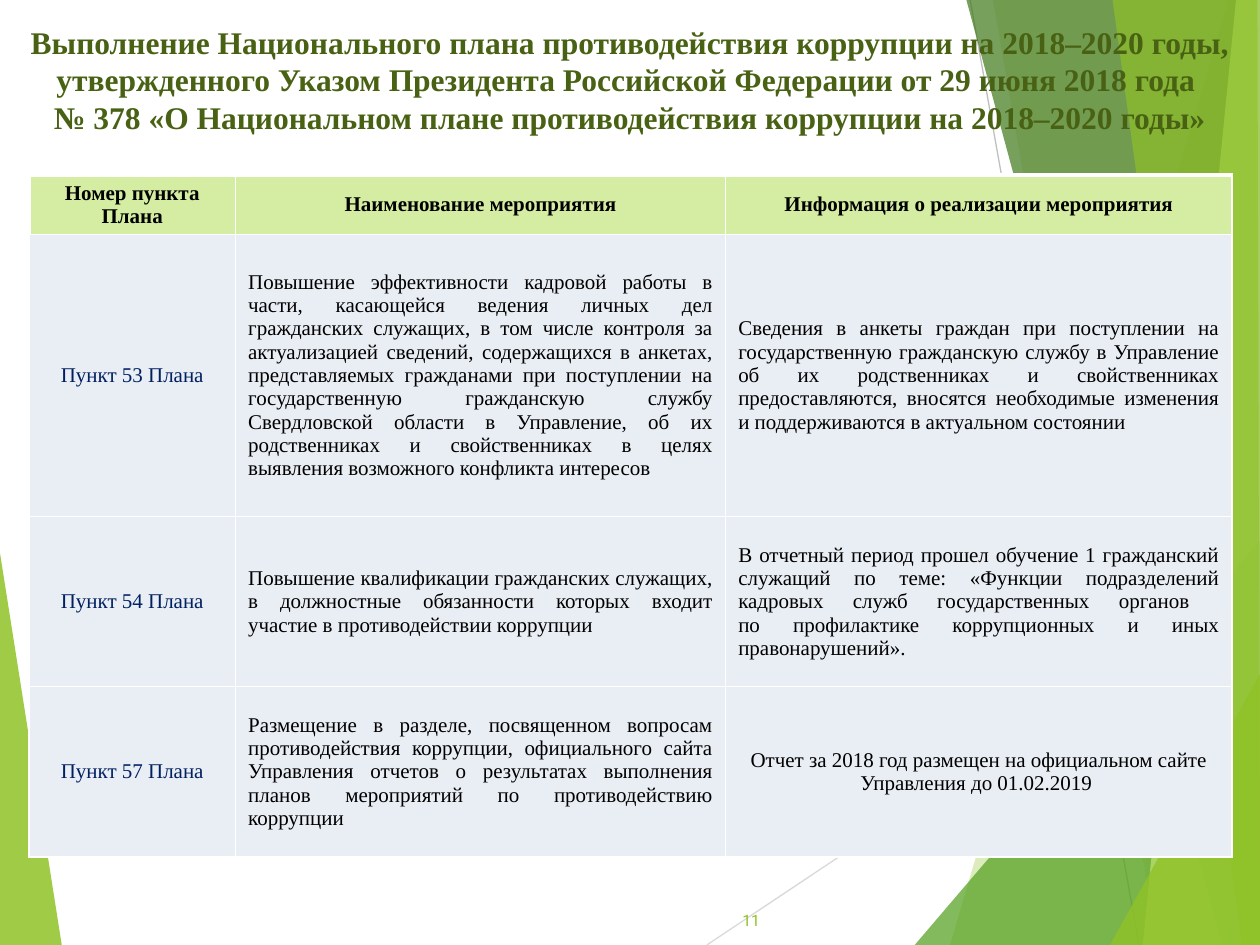
from copy import deepcopy

from lxml import etree
from pptx import Presentation
from pptx.dml.color import RGBColor
from pptx.enum.shapes import MSO_CONNECTOR
from pptx.enum.text import MSO_ANCHOR, MSO_AUTO_SIZE, PP_ALIGN
from pptx.oxml.ns import qn
from pptx.util import Inches, Pt

CENTER, JUSTIFY, RIGHT = PP_ALIGN.CENTER, PP_ALIGN.JUSTIFY, PP_ALIGN.RIGHT
TOP, MIDDLE = MSO_ANCHOR.TOP, MSO_ANCHOR.MIDDLE
STRAIGHT = MSO_CONNECTOR.STRAIGHT
NO_AUTOFIT = MSO_AUTO_SIZE.NONE

WIDTH, HEIGHT = 10, 7.5
COLORS = {
    "title": "486113", "text": "000000", "item": "002060", "border": "FFFFFF",
    "header": "D5EDA2", "body": "E9EDF4", "lime": "90C226", "green": "54A021",
    "forest": "3F7819", "pale": "C0E474", "light gray": "D9D9D9", "gray": "BFBFBF",
}
TITLE = (
    "Выполнение Национального плана противодействия коррупции на 2018–2020 годы, "
    "утвержденного Указом Президента Российской Федерации от 29 июня 2018 года \v"
    "№ 378 «О Национальном плане противодействия коррупции на 2018–2020 годы»"
)
PAGE_NUMBER = "11"
HEADERS = ["Номер пункта Плана", "Наименование мероприятия", "Информация о реализации мероприятия"]
ITEMS = [
    (
        "Пункт 53 Плана",
        "Повышение эффективности кадровой работы в части, касающейся ведения личных дел "
        "гражданских служащих, в том числе контроля за актуализацией сведений, содержащихся "
        "в анкетах, представляемых гражданами при поступлении на государственную гражданскую "
        "службу Свердловской области в Управление, об их родственниках и свойственниках "
        "в целях выявления возможного конфликта интересов",
        "Сведения в анкеты граждан при поступлении на государственную гражданскую службу "
        "в Управление об их родственниках и свойственниках предоставляются, вносятся "
        "необходимые изменения и поддерживаются в актуальном состоянии",
        JUSTIFY,
    ),
    (
        "Пункт 54 Плана",
        "Повышение квалификации гражданских служащих, в должностные обязанности которых "
        "входит участие в противодействии коррупции",
        "В отчетный период прошел обучение 1 гражданский служащий по теме: «Функции "
        "подразделений кадровых служб государственных органов \vпо профилактике "
        "коррупционных и иных правонарушений».",
        JUSTIFY,
    ),
    (
        "Пункт 57 Плана",
        "Размещение в разделе, посвященном вопросам противодействия коррупции, официального "
        "сайта Управления отчетов о результатах выполнения планов мероприятий "
        "по противодействию коррупции",
        "Отчет за 2018 год размещен на официальном сайте Управления до 01.02.2019 ",
        CENTER,
    ),
]
COLUMN_WIDTHS = [1.64, 3.89, 4.02]
ROW_HEIGHTS = [0.46, 2.24, 1.35, 1.35]
TABLE_LEFT, TABLE_TOP = 0.23, 1.39

RAYS = [
    ((5.61, HEIGHT), (WIDTH, 4.57), "light gray"),
    ((7.7, 0), (9.04, HEIGHT), "gray"),
]
FACETS = [
    ("lime", 85, [(0, 4.39), (0.49, HEIGHT), (0, HEIGHT)]),
    ("lime", 30, [(9.75, 0), (7.54, HEIGHT), (WIDTH, HEIGHT), (WIDTH, 0)]),
    ("lime", 20, [(7.88, 0), (9.19, HEIGHT), (WIDTH, HEIGHT), (WIDTH, 0)]),
    ("green", 72, [(7.26, HEIGHT), (WIDTH, 4.29), (WIDTH, HEIGHT)]),
    ("forest", 70, [(7.67, 0), (9.7, HEIGHT), (WIDTH, HEIGHT), (WIDTH, 0)]),
    ("pale", 70, [(9.81, 0), (9.07, HEIGHT), (WIDTH, HEIGHT), (WIDTH, 0)]),
    ("lime", 65, [(8.83, 0), (9.86, HEIGHT), (WIDTH, HEIGHT), (9.98, 0)]),
    ("lime", 80, [(8.81, HEIGHT), (WIDTH, 5.35), (WIDTH, HEIGHT)]),
]


def color(name):
    return RGBColor.from_string(COLORS[name])


def write(frame, text, size=12, font="Times New Roman", ink="text", bold=False,
          align=CENTER, anchor=MIDDLE):
    frame.word_wrap = True
    frame.vertical_anchor = anchor
    paragraph = frame.paragraphs[0]
    paragraph.text = text
    paragraph.alignment = align
    for run in paragraph.runs:
        run.font.size = Pt(size)
        run.font.name = font
        run.font.bold = bold
        run.font.color.rgb = color(ink)
    for line_break in paragraph._p.findall(qn("a:br")):
        line_break.append(deepcopy(paragraph.runs[0]._r.rPr))


def place(shape, left, top, width, height):
    shape.left, shape.top = Inches(left), Inches(top)
    shape.width, shape.height = Inches(width), Inches(height)


def add_ray(slide, start, end, ink):
    ray = slide.shapes.add_connector(STRAIGHT, *map(Inches, start + end))
    ray.line.color.rgb = color(ink)
    ray.line.width = Pt(0.75)
    etree.SubElement(ray._element.spPr, qn("a:effectLst"))


def add_facet(slide, ink, opacity, points):
    corners = [(Inches(x), Inches(y)) for x, y in points]
    builder = slide.shapes.build_freeform(*corners[0])
    builder.add_line_segments(corners[1:], close=True)
    facet = builder.convert_to_shape()
    facet.shadow.inherit = False
    facet.line.fill.background()
    facet.fill.solid()
    facet.fill.fore_color.rgb = color(ink)
    fill_color = facet._element.spPr.find(f".//{qn('a:srgbClr')}")
    etree.SubElement(fill_color, qn("a:alpha"), val=str(opacity * 1000))


def style_cell(cell, fill, borders):
    properties = cell._tc.get_or_add_tcPr()
    for side, points in borders.items():
        line = etree.SubElement(properties, qn(f"a:ln{side}"), w=str(Pt(points)))
        solid = etree.SubElement(line, qn("a:solidFill"))
        etree.SubElement(solid, qn("a:srgbClr"), val=COLORS["border"])
    cell.fill.solid()
    cell.fill.fore_color.rgb = color(fill)


def add_plan_table(slide):
    size = (sum(COLUMN_WIDTHS), sum(ROW_HEIGHTS))
    frame = slide.shapes.add_table(len(ROW_HEIGHTS), len(COLUMN_WIDTHS),
                                   *map(Inches, (TABLE_LEFT, TABLE_TOP) + size))
    table = frame.table
    for column, width in zip(table.columns, COLUMN_WIDTHS):
        column.width = Inches(width)
    for row, height in zip(table.rows, ROW_HEIGHTS):
        row.height = Inches(height)
    for index, header in enumerate(HEADERS):
        cell = table.cell(0, index)
        style_cell(cell, "header", {"L": 1 if index else 3, "R": 1, "T": 3, "B": 1})
        write(cell.text_frame, header, bold=True)
        cell.vertical_anchor = MIDDLE
    for row_index, (item, measure, result, result_align) in enumerate(ITEMS, 1):
        formats = [(item, "item", CENTER), (measure, "text", JUSTIFY), (result, "text", result_align)]
        for index, (text, ink, align) in enumerate(formats):
            cell = table.cell(row_index, index)
            style_cell(cell, "body", dict.fromkeys("LRTB", 1))
            write(cell.text_frame, text, ink=ink, align=align)
            cell.vertical_anchor = MIDDLE


def main():
    presentation = Presentation()
    presentation.slide_width, presentation.slide_height = Inches(WIDTH), Inches(HEIGHT)
    slide = presentation.slides.add_slide(presentation.slide_layouts[5])
    for ray in RAYS:
        add_ray(slide, *ray)
    for facet in FACETS:
        add_facet(slide, *facet)
    add_plan_table(slide)

    title = slide.shapes.title
    place(title, 0.12, 0.13, 9.76, 1.01)
    title.text_frame.auto_size = NO_AUTOFIT
    write(title.text_frame, TITLE, size=18, ink="title", bold=True, anchor=TOP)
    slide.shapes._spTree.append(title._element)

    number = slide.shapes.add_textbox(*map(Inches, (4.13, 7.1, 2, 0.4)))
    write(number.text_frame, PAGE_NUMBER, size=9, font="Roboto", ink="lime", align=RIGHT)
    presentation.save("out.pptx")


if __name__ == "__main__":
    main()
